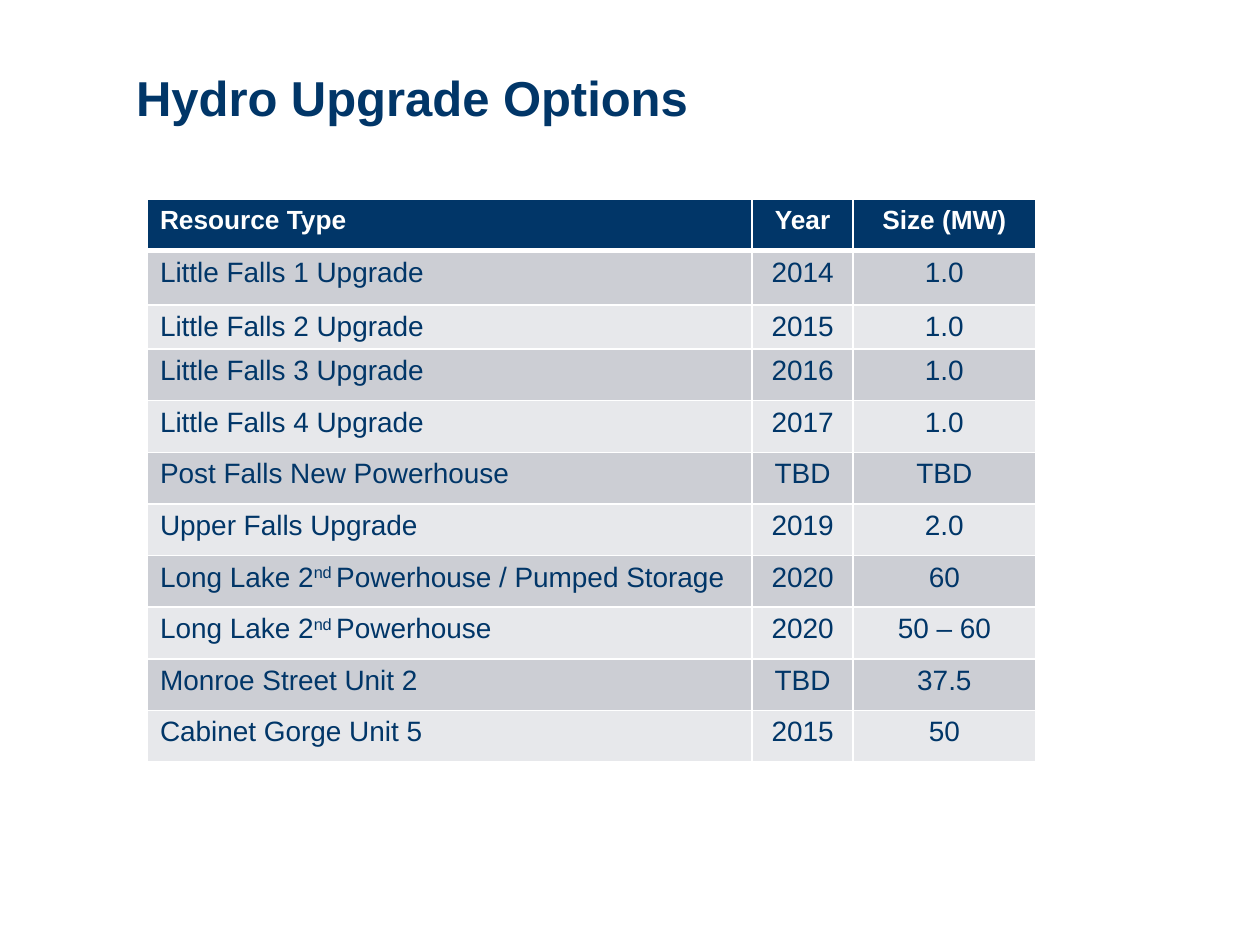
import pptx
import pptx.util
from lxml import etree
from pptx.dml.color import RGBColor
from pptx.enum.text import MSO_ANCHOR, MSO_AUTO_SIZE, PP_ALIGN
from pptx.oxml.ns import qn
from pptx.util import Inches, Pt

NAVY, WHITE = "013668", "FFFFFF"
BANDS = ["CCCED4", "E7E8EB"]
TITLE = "Hydro Upgrade Options"
# A tuple holds text before, in and after a superscript.
ROWS = [
    ["Resource Type", "Year", "Size (MW)"],
    ["Little Falls 1 Upgrade", "2014", "1.0"],
    ["Little Falls 2 Upgrade", "2015", "1.0"],
    ["Little Falls 3 Upgrade", "2016", "1.0"],
    ["Little Falls 4 Upgrade", "2017", "1.0"],
    ["Post Falls New Powerhouse", "TBD", "TBD"],
    ["Upper Falls Upgrade", "2019", "2.0"],
    [("Long Lake 2", "nd ", "Powerhouse / Pumped Storage"), "2020", "60"],
    [("Long Lake 2", "nd ", "Powerhouse"), "2020", "50 – 60"],
    ["Monroe Street Unit 2", "TBD", "37.5"],
    ["Cabinet Gorge Unit 5", "2015", "50"],
]
COL_WIDTHS = [4.8, 0.8, 1.45]
ROW_HEIGHTS = [0.41, 0.43, 0.35] + [0.41] * 8


def rgb(color):
    return RGBColor.from_string(color)


def set_font(p, size, color, bold):
    p.font.name, p.font.size, p.font.bold = "Arial", Pt(size), bold
    p.font.color.rgb = rgb(color)


def set_borders(cell, bottom):
    tcPr = cell._tc.get_or_add_tcPr()
    for side, width in [("L", 1), ("R", 1), ("T", 1), ("B", bottom)]:
        ln = etree.SubElement(tcPr, qn(f"a:ln{side}"), w=str(Pt(width)))
        fill = etree.SubElement(ln, qn("a:solidFill"))
        etree.SubElement(fill, qn("a:srgbClr"), val=WHITE)


def fill_cell(cell, text, row, col):
    header = row == 0
    set_borders(cell, 3 if header else 1)
    cell.fill.solid()
    cell.fill.fore_color.rgb = rgb(NAVY if header else BANDS[(row - 1) % 2])
    p = cell.text_frame.paragraphs[0]
    p.alignment = PP_ALIGN.CENTER if col else PP_ALIGN.LEFT
    set_font(p, 15 if header else 16, WHITE if header else NAVY, header)
    parts = (text,) if isinstance(text, str) else text
    for i, part in enumerate(parts):
        r = p.add_run()
        r.text = part
        if i == 1:
            r._r.get_or_add_rPr().set("baseline", "30000")


prs = pptx.Presentation()
prs.slide_width, prs.slide_height = Inches(10), Inches(7.5)
s = prs.slides.add_slide(prs.slide_layouts[5])

title = s.shapes.title
title.left, title.top = Inches(1.08), Inches(0.12)
title.width, title.height = Inches(8.42), Inches(0.88)
tf = title.text_frame
tf.text = TITLE
tf.auto_size = MSO_AUTO_SIZE.NONE
tf.vertical_anchor = MSO_ANCHOR.BOTTOM
tf.margin_left = tf.margin_top = tf.margin_right = tf.margin_bottom = 0
p = tf.paragraphs[0]
p.alignment, p.line_spacing = PP_ALIGN.LEFT, Pt(27)
set_font(p, 28, NAVY, True)

table = s.shapes.add_table(
    len(ROWS), len(COL_WIDTHS), Inches(1.17), Inches(1.58),
    Inches(sum(COL_WIDTHS)), Inches(sum(ROW_HEIGHTS))).table
for column, width in zip(table.columns, COL_WIDTHS):
    column.width = Inches(width)
for i, (texts, height) in enumerate(zip(ROWS, ROW_HEIGHTS)):
    table.rows[i].height = Inches(height)
    for j, text in enumerate(texts):
        fill_cell(table.cell(i, j), text, i, j)

prs.save("out.pptx")
